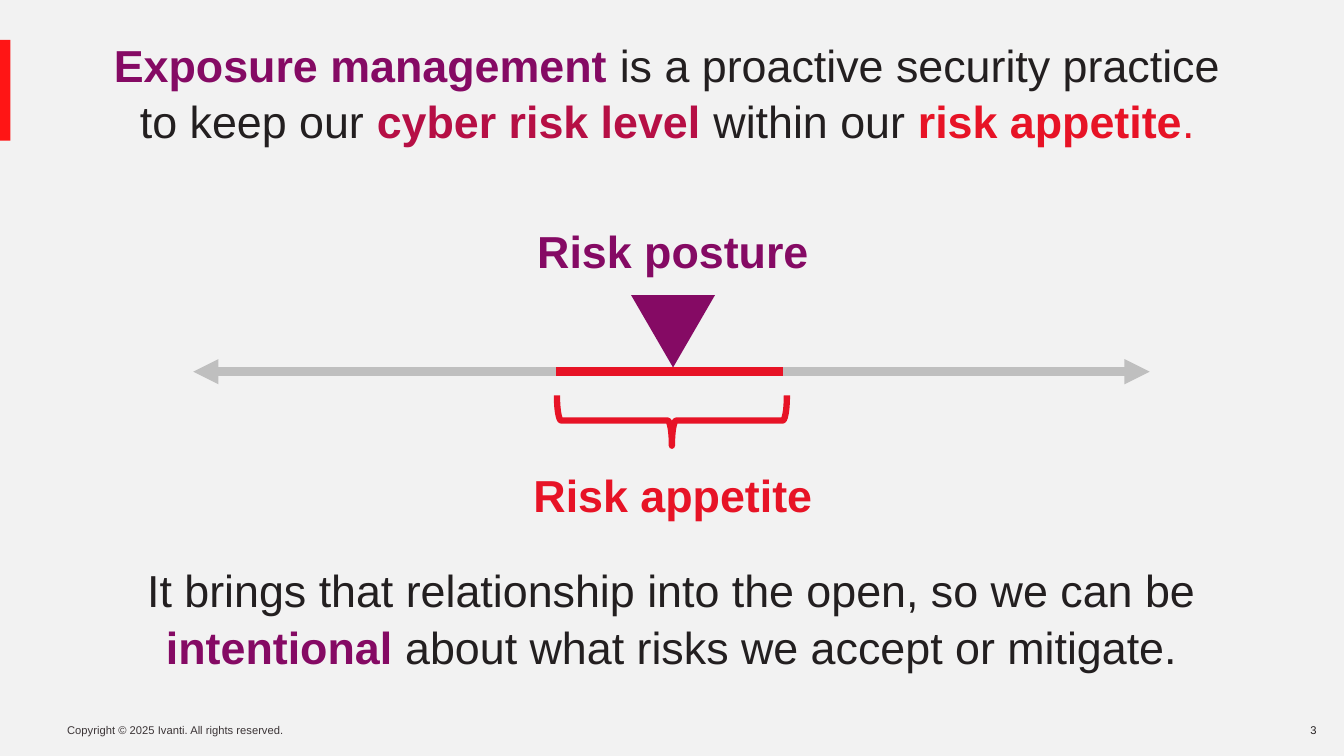
from lxml import etree
from pptx import Presentation
from pptx import util as u
from pptx.dml.color import RGBColor
from pptx.enum import shapes, text
from pptx.oxml import ns

PX = 9525
FONT = "Arial"
BACKGROUND = RGBColor(0xF2, 0xF2, 0xF2)
ACCENT = RGBColor(0xFF, 0x15, 0x15)
INK = RGBColor(0x23, 0x1F, 0x20)
FOOTER_INK = RGBColor(0x3B, 0x34, 0x36)
PURPLE = RGBColor(0x85, 0x0A, 0x64)
CRIMSON = RGBColor(0xB6, 0x0F, 0x45)
RED = RGBColor(0xE7, 0x13, 0x26)
GREY = RGBColor(0xBF, 0xBF, 0xBF)

LEFT, CENTER, RIGHT = text.PP_ALIGN.LEFT, text.PP_ALIGN.CENTER, text.PP_ALIGN.RIGHT
AXIS_Y = 354
LABEL_LEFT, LABEL_WIDTH, LABEL_HEIGHT = 471, 340, 61


def px(*lengths):
    return [u.Emu(length * PX) for length in lengths]


def set_margins(frame, *margins):
    """Set left, top, right and bottom margins in px."""
    (frame.margin_left, frame.margin_top,
     frame.margin_right, frame.margin_bottom) = px(*margins)


def write_spans(frame, spans, size, align):
    """Fill one paragraph from (text, colour, bold) spans; newlines become line breaks."""
    para = frame.paragraphs[0]
    para.alignment = align
    para.line_spacing = 1.05
    for words, color, bold in spans:
        for index, line in enumerate(words.split("\n")):
            if index:
                para.add_line_break()
            span = para.add_run()
            span.text = line
            span.font.name = FONT
            span.font.size = u.Pt(size)
            span.font.bold = bold
            span.font.color.rgb = color


def add_title(page, spans):
    title = page.shapes.title
    title.left, title.top, title.width, title.height = px(64, 57, 1153, 60)
    frame = title.text_frame
    frame.word_wrap = True
    frame.auto_size = text.MSO_AUTO_SIZE.NONE
    frame.vertical_anchor = text.MSO_ANCHOR.MIDDLE
    set_margins(frame, 0, 0, 10, 0)
    write_spans(frame, spans, 32, CENTER)


def add_text(page, place, spans, size=32, align=CENTER, wrap=True):
    frame = page.shapes.add_textbox(*px(*place)).text_frame
    frame.word_wrap = wrap
    frame.auto_size = text.MSO_AUTO_SIZE.SHAPE_TO_FIT_TEXT
    write_spans(frame, spans, size, align)
    return frame


def add_footer(page, left, width, words, color, align, wrap):
    frame = add_text(page, (left, 683, width, 23), [(words, color, False)], 8, align, wrap)
    set_margins(frame, 0, 5, 10, 5)


def add_filled(page, kind, place, color, rotation=0):
    shape = page.shapes.add_shape(kind, *px(*place))
    shape.shadow.inherit = False
    shape.rotation = rotation
    shape.fill.solid()
    shape.fill.fore_color.rgb = color
    shape.line.fill.background()


def add_brace(page, place, color):
    brace = page.shapes.add_shape(shapes.MSO_SHAPE.LEFT_BRACE, *px(*place))
    brace.shadow.inherit = False
    brace.rotation = 270
    brace.fill.background()
    brace.line.color.rgb = color
    brace.line.width = u.Pt(4.5)


def add_axis(page, start, end, color, arrows=False):
    line = page.shapes.add_connector(
        shapes.MSO_CONNECTOR.STRAIGHT, *px(start, AXIS_Y, end, AXIS_Y))
    line.line.color.rgb = color
    line.line.width = u.Pt(6)
    if arrows:
        outline = line.line._get_or_add_ln()
        for tag in ("a:headEnd", "a:tailEnd"):
            etree.SubElement(outline, ns.qn(tag), type="triangle")
    etree.SubElement(line._element.spPr, ns.qn("a:effectLst"))


def main():
    deck = Presentation()
    deck.slide_width, deck.slide_height = px(1280, 720)
    page = deck.slides.add_slide(deck.slide_layouts[5])
    page.background.fill.solid()
    page.background.fill.fore_color.rgb = BACKGROUND

    add_footer(page, 64, 219, "Copyright © 2025 Ivanti. All rights reserved.",
               FOOTER_INK, LEFT, False)
    add_filled(page, shapes.MSO_SHAPE.RECTANGLE, (0, 38, 10, 96), ACCENT)
    add_footer(page, 1218, 46, "3", INK, RIGHT, True)

    add_title(page, [
        ("Exposure management", PURPLE, True),
        (" is a proactive security practice\nto keep our ", INK, False),
        ("cyber risk level ", CRIMSON, True),
        ("within our ", INK, False),
        ("risk appetite", RED, True),
        (".", RED, False),
    ])

    add_axis(page, 184, 1095, GREY, arrows=True)
    add_brace(page, (616, 291, 48, 219), RED)
    add_axis(page, 530, 746, RED)
    add_filled(page, shapes.MSO_SHAPE.ISOSCELES_TRIANGLE, (601, 281, 80, 69), PURPLE, 180)
    for top, words, color in ((438, "Risk appetite", RED), (206, "Risk posture", PURPLE)):
        add_text(page, (LABEL_LEFT, top, LABEL_WIDTH, LABEL_HEIGHT), [(words, color, True)])

    add_text(page, (113, 529, 1054, 113), [
        ("It brings that relationship into the open, so we can be ", INK, False),
        ("intentional", PURPLE, True),
        (" about what risks we accept or mitigate.", INK, False),
    ])
    deck.save("out.pptx")


if __name__ == "__main__":
    main()
